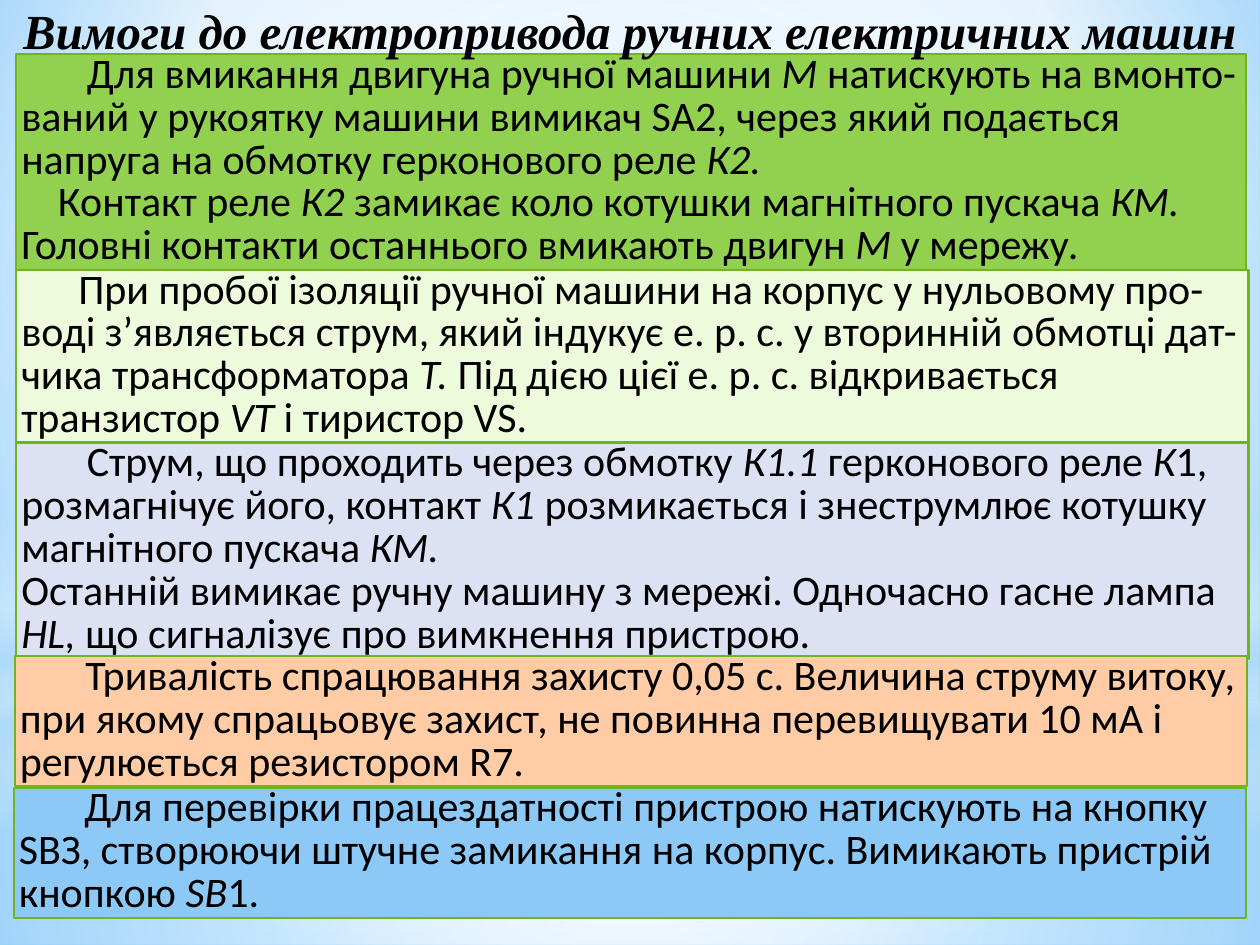
"""Build a slide of stacked text panels on requirements for electric hand tool drives."""
from dataclasses import dataclass
from typing import Optional

import pptx
import pptx.dml.color
import pptx.enum.shapes
import pptx.enum.text
import pptx.oxml
import pptx.oxml.ns
import pptx.util

Cm = pptx.util.Cm
SHAPES = pptx.enum.shapes.MSO_SHAPE
ALIGN = pptx.enum.text.PP_ALIGN

COLOURS = {
    "text": "000000", "border": "72B41D", "green": "92D050", "pale_green": "EDFBDC",
    "lavender": "DCE1F4", "peach": "FFCCA6", "blue": "8CC9F7",
    "white": "FFFFFF", "haze": "B4DCFA", "sky": "9ED5FF", "deep_sky": "5BB9FF",
}
INDENT = 1.32


@dataclass(frozen=True)
class Stop:
    position: int
    colour: str
    alpha: int = 100


@dataclass(frozen=True)
class Glow:
    top: float
    height: float
    stops: tuple[Stop, ...]
    preset: int = SHAPES.RECTANGLE
    angle: Optional[int] = None


@dataclass(frozen=True)
class Paragraph:
    text: str
    indent: float = INDENT


@dataclass(frozen=True)
class Panel:
    left: float
    top: float
    width: float
    height: float
    colour: str
    paragraphs: tuple[Paragraph, ...]


BACKGROUND = (Stop(0, "sky"), Stop(60, "white"), Stop(100, "deep_sky"))

GLOWS = (
    Glow(14.17, 4.88, (Stop(0, "white", 91), Stop(37, "white", 76), Stop(100, "haze", 79))),
    Glow(0, 14.17, (Stop(0, "white", 89), Stop(48, "white", 62), Stop(100, "haze", 79))),
    Glow(10.46, 6.35, (Stop(0, "white", 0), Stop(29, "white", 30), Stop(45, "haze", 40),
                       Stop(55, "white", 26), Stop(65, "haze", 60), Stop(100, "white", 0)),
         angle=90),
    Glow(4.45, 14.17, (Stop(0, "white"), Stop(56, "white", 0)), preset=SHAPES.OVAL),
)

TITLE = "Вимоги до електропривода ручних електричних машин"

PANELS = (
    Panel(0.33, 1.09, 24.79, 4.37, "green", (
        Paragraph("Для вмикання двигуна ручної машини *М* натискують на вмонто-ваний у рукоятку "
                  "машини вимикач SА2, через який подається напруга на обмотку герконового "
                  "реле *К2.*"),
        Paragraph("Контакт реле *К2* замикає коло котушки магнітного пускача *КМ.* Головні "
                  "контакти останнього вмикають двигун *М* у мережу.", 0.74))),
    Panel(0.33, 5.44, 24.84, 3.5, "pale_green", (
        Paragraph("При пробої ізоляції ручної машини на корпус у нульовому про-воді з’являється "
                  "струм, який індукує е. р. с. у вторинній обмотці дат-чика трансформатора *Т.* "
                  "Під дією цієї е. р. с. відкривається транзистор *VТ* і тиристор VS.", 1.15),)),
    Panel(0.33, 8.92, 24.84, 4.37, "lavender", (
        Paragraph("Струм, що проходить через обмотку *К1.1 *герконового реле *К*1, розмагнічує "
                  "його, контакт *К1* розмикається і знеструмлює котушку магнітного "
                  "пускача *КМ.*"),
        Paragraph("Останній вимикає ручну машину з мережі. Одночасно гасне лампа *НL,* що "
                  "сигналізує про вимкнення пристрою.", 0))),
    Panel(0.3, 13.23, 24.84, 2.62, "peach", (
        Paragraph("Тривалість спрацювання захисту 0,05 с. Величина струму витоку, при якому "
                  "спрацьовує захист, не повинна перевищувати 10 мА і регулюється "
                  "резистором R7."),)),
    Panel(0.28, 15.88, 24.84, 2.62, "blue", (
        Paragraph("Для перевірки працездатності пристрою натискують на кнопку SВЗ, створюючи "
                  "штучне замикання на корпус. Вимикають пристрій кнопкою *SВ*1."),)),
)


def rgb(name: str) -> pptx.dml.color.RGBColor:
    return pptx.dml.color.RGBColor.from_string(COLOURS[name])


def replace_with_gradient(solid, stops: tuple[Stop, ...], focus=(50, 50, 50, 50),
                          angle: Optional[int] = None) -> None:
    stop_xml = "".join(
        f'<a:gs pos="{stop.position * 1000}"><a:srgbClr val="{COLOURS[stop.colour]}">'
        f'<a:alpha val="{stop.alpha * 1000}"/></a:srgbClr></a:gs>' for stop in stops)
    if angle is None:
        edges = " ".join(f'{side}="{value * 1000}"' for side, value in zip("ltrb", focus))
        direction = f'<a:path path="circle"><a:fillToRect {edges}/></a:path>'
    else:
        direction = f'<a:lin ang="{angle * 60000}" scaled="0"/>'
    gradient = pptx.oxml.parse_xml(
        f'<a:gradFill {pptx.oxml.ns.nsdecls("a")} rotWithShape="1">'
        f'<a:gsLst>{stop_xml}</a:gsLst>{direction}</a:gradFill>')
    solid.getparent().replace(solid, gradient)


def write_text(paragraph, text: str, *, size: float, font: str, bold: bool = False,
               italic: bool = False, align: int = ALIGN.LEFT, indent: float = 0) -> None:
    paragraph.alignment = align
    paragraph.line_spacing = 0.85
    properties = paragraph._p.get_or_add_pPr()
    properties.set("marL", "0")
    properties.set("indent", str(Cm(indent)))
    for number, part in enumerate(text.split("*")):
        if part:
            run = paragraph.add_run()
            run.text = part
            run.font.size = pptx.util.Pt(size)
            run.font.name = font
            run.font.bold = bold
            run.font.italic = italic or number % 2 == 1
            run.font.color.rgb = rgb("text")


def prepare_frame(frame, side_margin: float) -> None:
    frame.word_wrap = True
    frame.auto_size = pptx.enum.text.MSO_AUTO_SIZE.SHAPE_TO_FIT_TEXT
    frame.vertical_anchor = pptx.enum.text.MSO_ANCHOR.TOP
    frame.margin_left = frame.margin_right = Cm(side_margin)
    frame.margin_top = frame.margin_bottom = 0


def add_glow(slide, glow: Glow, order: int) -> None:
    shape = slide.shapes.add_shape(glow.preset, 0, Cm(glow.top), Cm(25.4), Cm(glow.height))
    shape.shadow.inherit = False
    shape.line.fill.background()
    shape.fill.solid()
    replace_with_gradient(shape.element.xpath("p:spPr/a:solidFill")[0], glow.stops,
                          angle=glow.angle)
    shape.element.xpath("p:nvSpPr/p:cNvPr")[0].set("id", str(100 + order))
    slide.slide_layout.slide_master.shapes.element.insert(2 + order, shape.element)


def add_panel(slide, panel: Panel) -> None:
    shape = slide.shapes.add_shape(SHAPES.RECTANGLE, Cm(panel.left), Cm(panel.top),
                                   Cm(panel.width), Cm(panel.height))
    shape.shadow.inherit = False
    shape.fill.solid()
    shape.fill.fore_color.rgb = rgb(panel.colour)
    shape.line.color.rgb = rgb("border")
    shape.line.width = pptx.util.Pt(1.25)
    frame = shape.text_frame
    prepare_frame(frame, 0.1)
    for number, content in enumerate(panel.paragraphs):
        paragraph = frame.add_paragraph() if number else frame.paragraphs[0]
        write_text(paragraph, content.text, size=24, font="Calibri", indent=content.indent)


def place_title(slide) -> None:
    title = slide.shapes.title
    title.left, title.top, title.width, title.height = Cm(0.3), Cm(0.2), Cm(24.79), Cm(1.02)
    prepare_frame(title.text_frame, 0)
    write_text(title.text_frame.paragraphs[0], TITLE, size=28, font="Times New Roman",
               bold=True, italic=True, align=ALIGN.CENTER)
    slide.shapes.element.append(title.element)


def main() -> None:
    presentation = pptx.Presentation()
    presentation.slide_width, presentation.slide_height = Cm(25.4), Cm(19.05)
    slide = presentation.slides.add_slide(presentation.slide_layouts[5])
    slide.background.fill.solid()
    replace_with_gradient(slide.element.xpath(".//p:bg//a:solidFill")[0], BACKGROUND,
                          focus=(20, 10, 20, 60))
    for order, glow in enumerate(GLOWS):
        add_glow(slide, glow, order)
    for panel in PANELS:
        add_panel(slide, panel)
    place_title(slide)
    presentation.save("out.pptx")


if __name__ == "__main__":
    main()
